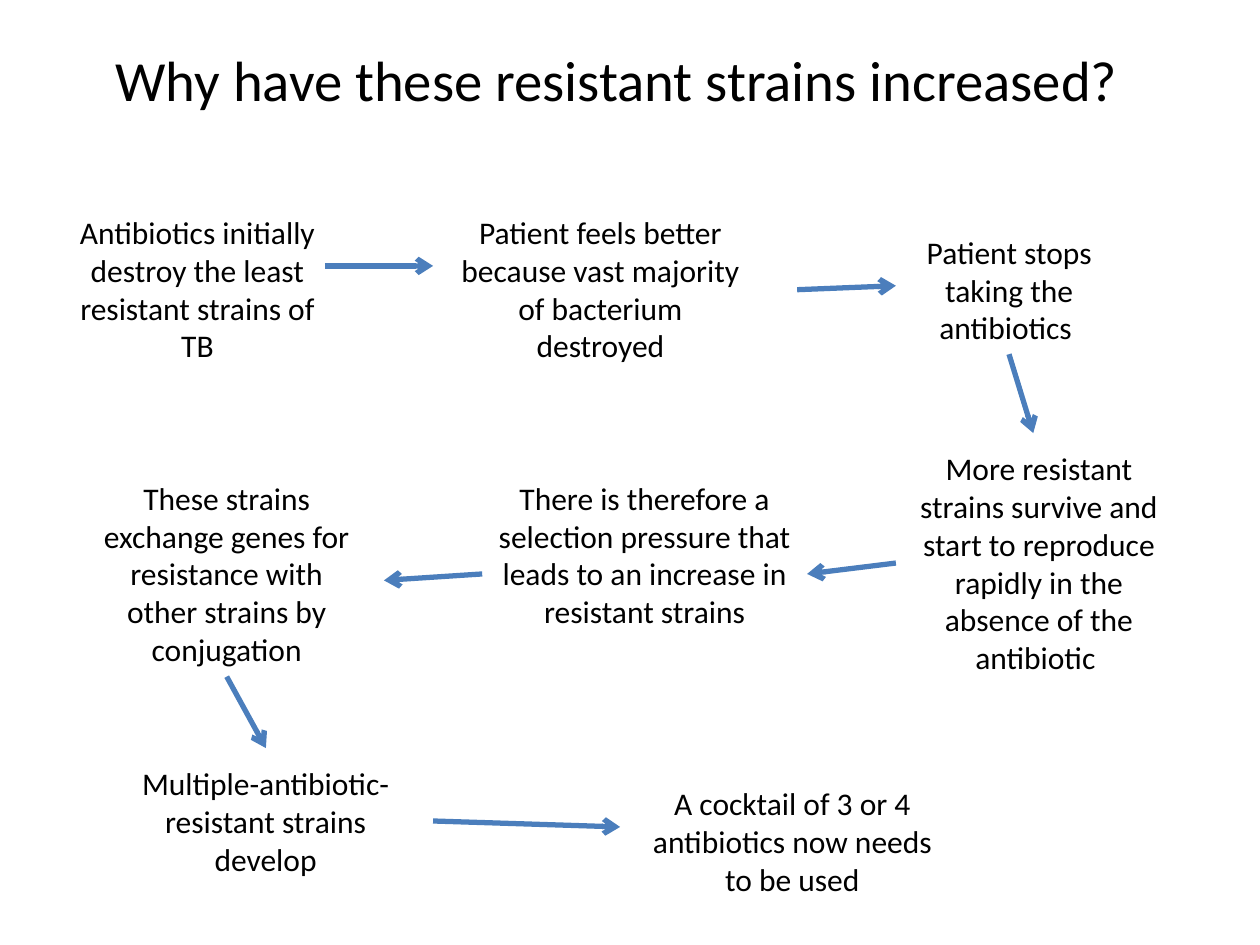
from lxml.etree import SubElement
from pptx import Presentation
from pptx.dml.color import RGBColor as RGB
from pptx.enum.shapes import MSO_CONNECTOR as Link
from pptx.enum.text import MSO_ANCHOR as Anchor, MSO_AUTO_SIZE as Fit, PP_ALIGN as Align
from pptx.oxml.ns import qn
from pptx.util import Cm, Pt


def color(code):
    return RGB.from_string(code)


def write(shape, text, frame, size):
    body = shape.text_frame
    body.text = text
    for key, val in frame.items():
        setattr(body, key, val)
    para = body.paragraphs[0]
    para.alignment = Align.CENTER
    font = para.runs[0].font
    for key, val in {"name": "Calibri", "size": Pt(size)}.items():
        setattr(font, key, val)
    font.color.rgb = color("000000")


deck = Presentation()
deck.slide_width, deck.slide_height = Cm(25.4), Cm(19.05)
slide = deck.slides.add_slide(deck.slide_layouts[5])

title = slide.shapes.title
place = {"left": Cm(1), "top": Cm(0), "width": Cm(22.86), "height": Cm(3.18)}
for key, val in place.items():
    setattr(title, key, val)
head = {"word_wrap": True, "auto_size": Fit.NONE, "vertical_anchor": Anchor.MIDDLE}
write(title, "Why have these resistant strains increased?", head, 32.4)

steps = [
    (1.2, 4.17, 5.56, 3.33, "Antibiotics initially destroy the least resistant strains of TB"),
    (8.93, 4.17, 6.35, 3.33, "Patient feels better because vast majority of bacterium destroyed"),
    (18.06, 4.57, 4.57, 2.57, "Patient stops taking the antibiotics "),
    (18.06, 8.93, 5.77, 4.87, "More resistant strains survive and start to reproduce rapidly "
     "in the absence of the antibiotic "),
    (9.72, 9.53, 6.55, 4.11, "There is therefore a selection pressure that leads to "
     "an increase in resistant strains"),
    (1.79, 9.53, 5.56, 4.11, "These strains exchange genes for resistance with other "
     "strains by conjugation"),
    (1.98, 15.28, 6.75, 2.57, "Multiple-antibiotic-resistant strains develop"),
    (12.7, 15.68, 6.55, 2.57, "A cocktail of 3 or 4 antibiotics now needs to be used"),
]
note = {"word_wrap": True, "auto_size": Fit.SHAPE_TO_FIT_TEXT, "vertical_anchor": Anchor.TOP}
for *spot, text in steps:
    box = slide.shapes.add_textbox(*map(Cm, spot))
    write(box, text, note, 18)

arrows = [
    (6.55, 5.36, 8.73, 5.36),
    (16.07, 5.84, 18.06, 5.76),
    (20.34, 7.14, 20.83, 8.73),
    (18.06, 11.35, 16.27, 11.57),
    (9.72, 11.57, 7.74, 11.7),
    (4.57, 13.64, 5.36, 15.08),
    (8.73, 16.55, 12.5, 16.67),
]
for ends in arrows:
    arrow = slide.shapes.add_connector(Link.STRAIGHT, *map(Cm, ends))
    arrow.line.color.rgb = color("4B7EBC")
    arrow.line.width = Pt(3)
    SubElement(arrow.get_or_add_ln(), qn("a:tailEnd"), type="arrow")
    SubElement(arrow._element.spPr, qn("a:effectLst"))

deck.save("out.pptx")
